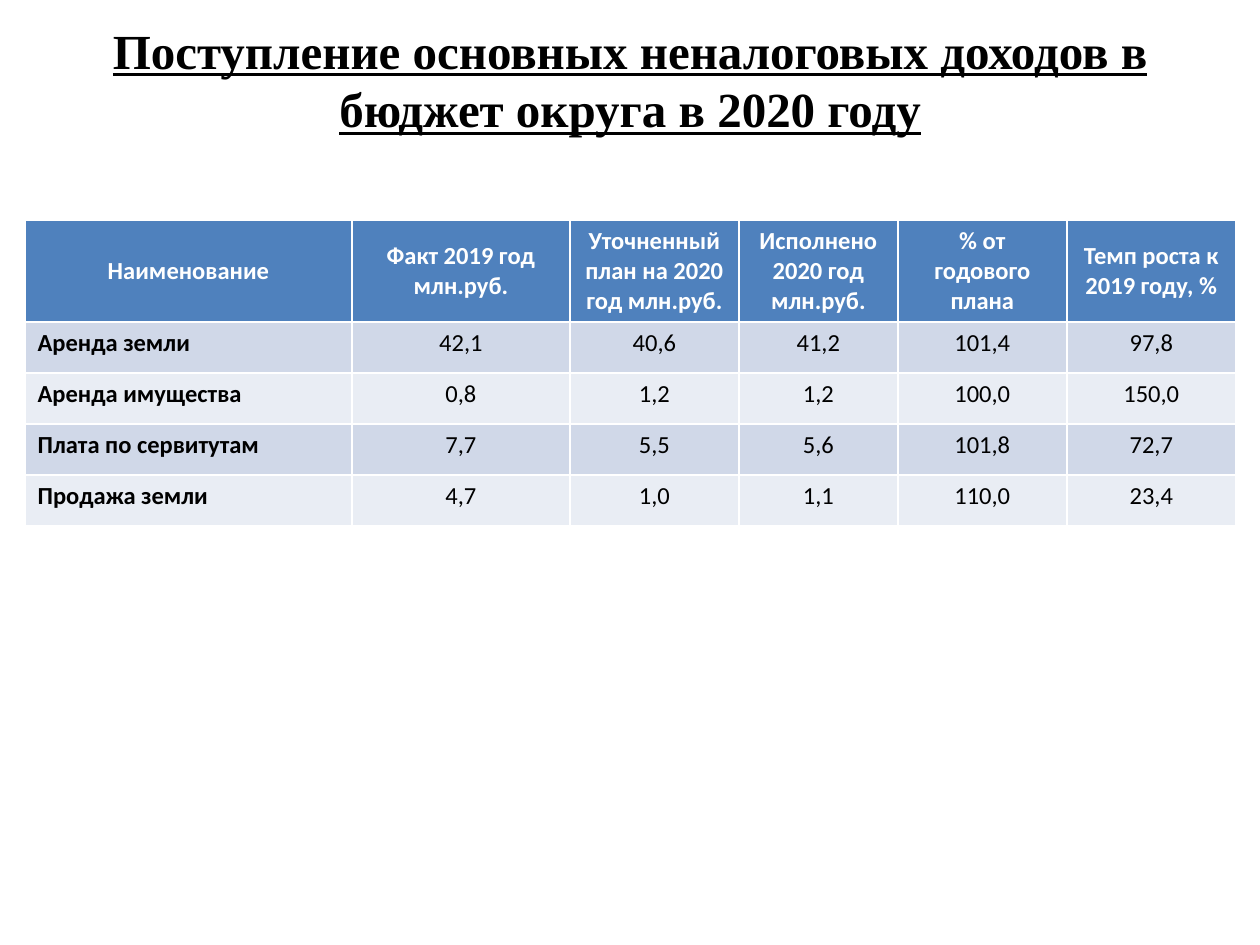
from pptx import Presentation
from pptx import util as u
from pptx.dml.color import RGBColor
from pptx.enum import text

PX = 914400 // 126  # EMU per pixel

BLACK = RGBColor(0x00, 0x00, 0x00)
WHITE = RGBColor(0xFF, 0xFF, 0xFF)
HEADER = RGBColor(0x4F, 0x81, 0xBD)
BAND_DARK = RGBColor(0xD0, 0xD8, 0xE8)
BAND_LIGHT = RGBColor(0xE9, 0xED, 0xF4)

prs = Presentation()
prs.slide_width, prs.slide_height = u.Inches(10), u.Inches(7.5)
s = prs.slides.add_slide(prs.slide_layouts[5])

# Title
title = s.shapes.title
title.left, title.top, title.width, title.height = [
    v * PX for v in (63, 0, 1134, 158)]
tf = title.text_frame
tf.text = "Поступление основных неналоговых доходов в бюджет округа в 2020 году"
tf.vertical_anchor = text.MSO_ANCHOR.MIDDLE
p = tf.paragraphs[0]
p.alignment = text.PP_ALIGN.CENTER
font = p.runs[0].font
font.name, font.size = "Times New Roman", u.Pt(28)
font.bold = font.underline = True
font.color.rgb = BLACK

# Income table
rows = [
    ("Наименование", "Факт 2019 год млн.руб.", "Уточненный план на 2020 год млн.руб.",
     "Исполнено 2020 год млн.руб.", "% от годового плана", "Темп роста к 2019 году, %"),
    ("Аренда земли", "42,1", "40,6", "41,2", "101,4", "97,8"),
    ("Аренда имущества", "0,8", "1,2", "1,2", "100,0", "150,0"),
    ("Плата по сервитутам", "7,7", "5,5", "5,6", "101,8", "72,7"),
    ("Продажа земли", "4,7", "1,0", "1,1", "110,0", "23,4"),
]
col_widths = [327, 218, 169, 159, 169, 169]
row_heights = [102] + [51] * 4

table = s.shapes.add_table(
    len(rows), len(col_widths), 25 * PX, 220 * PX,
    sum(col_widths) * PX, sum(row_heights) * PX).table
for column, width in zip(table.columns, col_widths):
    column.width = width * PX
for row, height in zip(table.rows, row_heights):
    row.height = height * PX

for i, row in enumerate(rows):
    for j, value in enumerate(row):
        is_header, is_name = i == 0, j == 0
        cell = table.cell(i, j)
        cell.fill.solid()
        cell.fill.fore_color.rgb = (
            HEADER if is_header else BAND_DARK if i % 2 else BAND_LIGHT)
        if is_header:
            cell.vertical_anchor = text.MSO_ANCHOR.MIDDLE
        cell.text_frame.text = value
        p = cell.text_frame.paragraphs[0]
        if is_header or not is_name:
            p.alignment = text.PP_ALIGN.CENTER
        font = p.runs[0].font
        font.name, font.size = "Calibri", u.Pt(14)
        font.bold = is_header or is_name
        font.color.rgb = WHITE if is_header else BLACK

prs.save("out.pptx")
